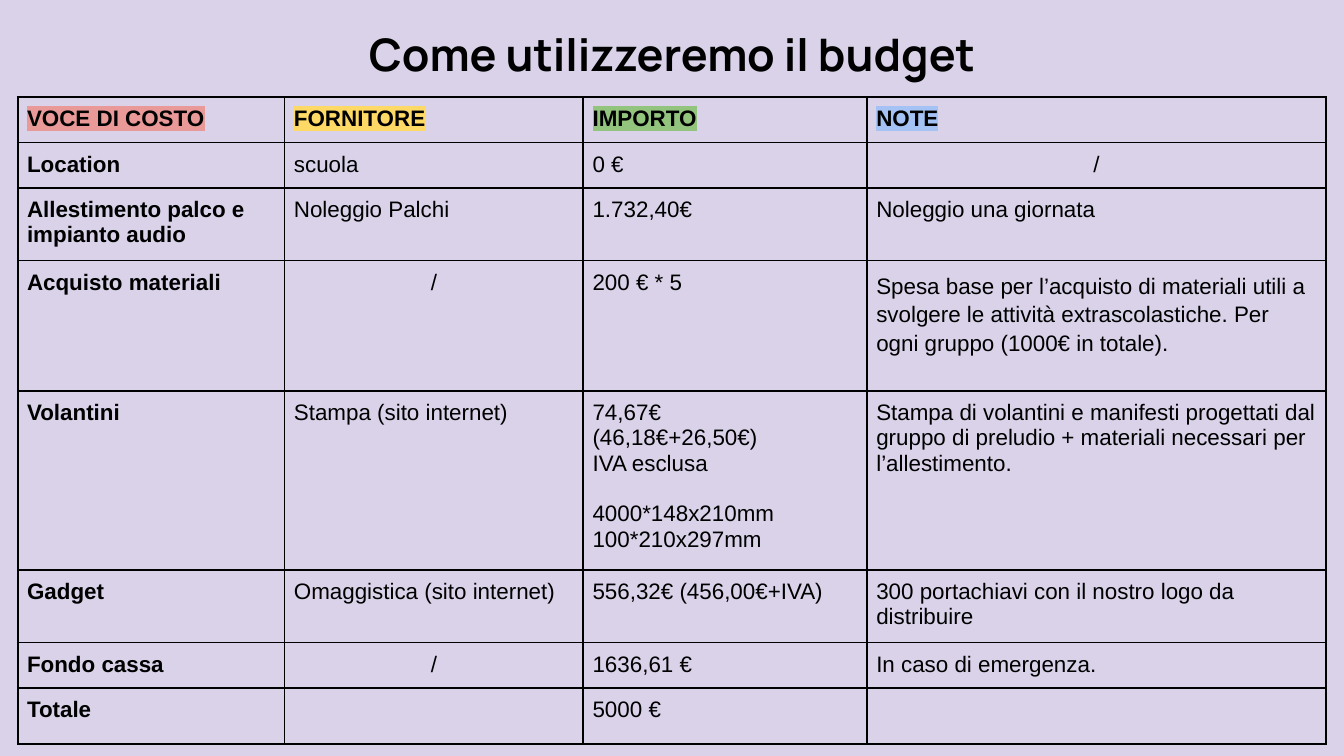
from lxml.etree import SubElement as Sub
from pptx import Presentation
from pptx.dml.color import RGBColor as Rgb
from pptx.enum.text import MSO_ANCHOR as Anchor, PP_ALIGN as Align
from pptx.oxml.ns import qn
from pptx.util import Pt

HEX = {"back": "D9D2E9", "ink": "000000"}
MARKS = ["EA9999", "FFD966", "93C47D", "A4C2F4"]
TITLE = "Come utilizzeremo il budget"
ROWS = [
    ("VOCE DI COSTO", "FORNITORE", "IMPORTO", "NOTE"),
    ("Location", "scuola", "0 €", "/"),
    ("Allestimento palco e impianto audio", "Noleggio Palchi", "1.732,40€",
     "Noleggio una giornata"),
    ("Acquisto materiali", "/", "200 € * 5",
     "Spesa base per l’acquisto di materiali utili a svolgere le attività "
     "extrascolastiche. Per ogni gruppo (1000€ in totale)."),
    ("Volantini", "Stampa (sito internet)",
     "74,67€\n(46,18€+26,50€)\nIVA esclusa\n4000*148x210mm\n100*210x297mm",
     "Stampa di volantini e manifesti progettati dal gruppo di preludio + "
     "materiali necessari per l’allestimento."),
    ("Gadget", "Omaggistica (sito internet)", "556,32€ (456,00€+IVA)",
     "300 portachiavi con il nostro logo da distribuire"),
    ("Fondo cassa", "/", "1636,61 €", "In caso di emergenza."),
    ("Totale", "", "5000 €", ""),
]
WIDTHS = [143, 160, 152, 246]
HEIGHTS = [23.5, 23.5, 37, 70, 90.5, 37, 23.5, 30]
LEFT, TOP, INSET = 9.5, 52, 5
LOOSE = (3, 3)
GAPS = {(4, 2, 3): 13.8}


def style(para, face, size, bold):
    font = para.font
    font.name, font.size, font.bold = face, Pt(size), bold
    font.color.rgb = Rgb.from_string(HEX["ink"])


def tint(parent, tag, color):
    fill = Sub(parent, qn(tag))
    Sub(fill, qn("a:srgbClr"), val=color)


def border(cell):
    props = cell._tc.get_or_add_tcPr()
    for side in "LRTB":
        line = Sub(props, qn("a:ln" + side), w=str(Pt(1)))
        tint(line, "a:solidFill", HEX["ink"])


def write(cell, text, row, col):
    cell.margin_left = cell.margin_right = Pt(INSET)
    cell.margin_top = cell.margin_bottom = Pt(INSET)
    border(cell)
    cell.fill.background()
    cell.text = text
    for num, para in enumerate(cell.text_frame.paragraphs):
        style(para, "Arial", 12, row == 0 or col == 0)
        para.alignment = Align.CENTER if text == "/" else Align.LEFT
        if (row, col) == LOOSE:
            para.line_spacing = 1.15
        if (row, col, num) in GAPS:
            para.space_before = Pt(GAPS[row, col, num])
        if row == 0:
            props = para.runs[0]._r.get_or_add_rPr()
            tint(props, "a:highlight", MARKS[col])


deck = Presentation()
deck.slide_width, deck.slide_height = Pt(720), Pt(405)
slide = deck.slides.add_slide(deck.slide_layouts[6])
slide.background.fill.solid()
slide.background.fill.fore_color.rgb = Rgb.from_string(HEX["back"])

box = slide.shapes.add_textbox(Pt(24.5), Pt(7.2), Pt(671), Pt(49))
frame = box.text_frame
frame.word_wrap = True
frame.vertical_anchor = Anchor.TOP
frame.margin_top = frame.margin_bottom = Pt(7.2)
frame.text = TITLE
head = frame.paragraphs[0]
head.alignment = Align.CENTER
style(head, "Manrope", 24, True)

grid = slide.shapes.add_table(
    len(ROWS), len(WIDTHS), Pt(LEFT), Pt(TOP), Pt(sum(WIDTHS)), Pt(sum(HEIGHTS))
).table
grid.first_row = grid.horz_banding = False
for col, width in zip(grid.columns, WIDTHS):
    col.width = Pt(width)
for row, height in zip(grid.rows, HEIGHTS):
    row.height = Pt(height)
for r, texts in enumerate(ROWS):
    for c, text in enumerate(texts):
        write(grid.cell(r, c), text, r, c)

deck.save("out.pptx")
